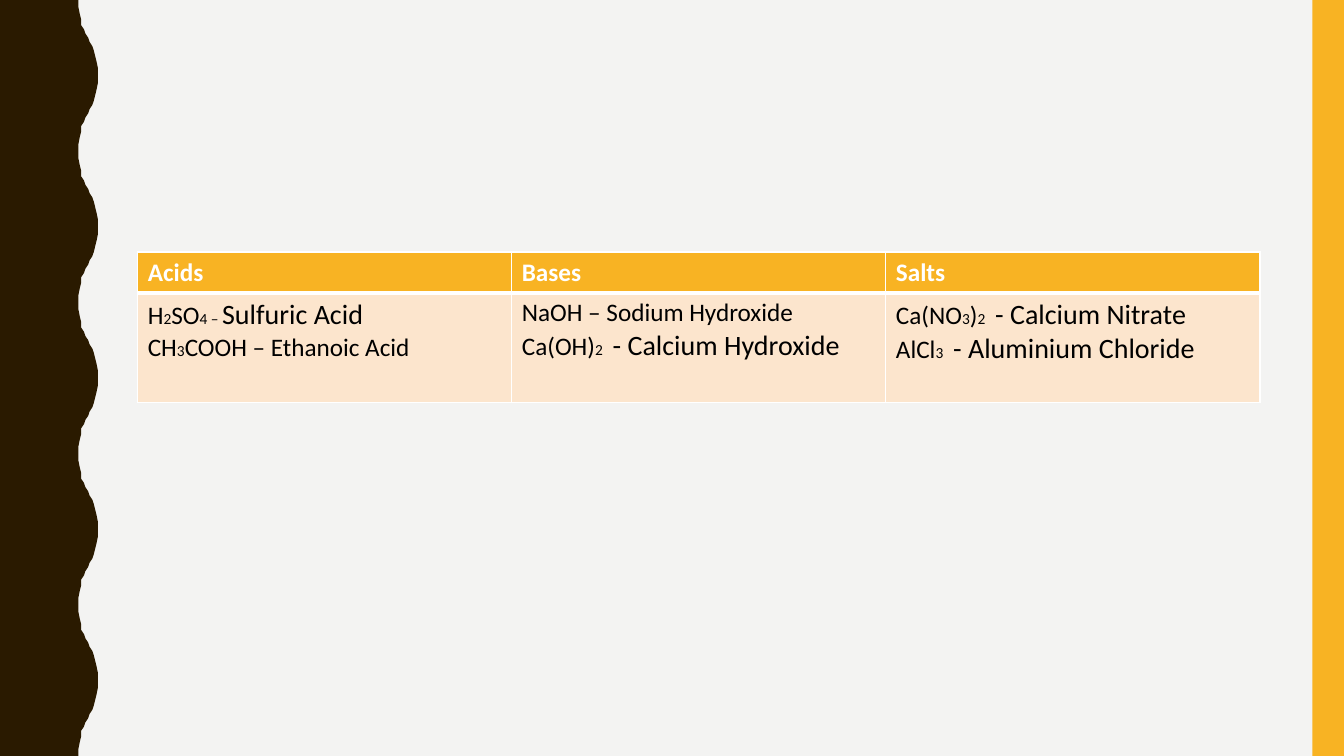
from lxml.etree import SubElement as Sub
from pptx import Presentation as Deck
from pptx.dml.color import RGBColor as Rgb
from pptx.enum.shapes import MSO_SHAPE as Kind
from pptx.oxml.ns import qn
from pptx.util import Pt

WAVE = [(56.2, 0), (56.2, 5), (56.9, 10), (57.6, 14.4), (58.3, 18),
        (59.8, 21), (61.2, 24), (62.6, 27), (64.1, 30), (65.5, 33),
        (67, 36), (68.4, 39.6), (69.1, 44), (69.8, 49), (69.8, 54)]
STEP = 108

HEADS = ["Acids", "Bases", "Salts"]
ITEMS = [
    [[("H", 18), ("2", 11), ("SO", 18), ("4 – ", 11), ("Sulfuric Acid", 20)],
     [("CH", 18), ("3", 11), ("COOH – Ethanoic Acid", 18)]],
    [[("NaOH – Sodium Hydroxide", 18)],
     [("Ca(OH)", 18), ("2 ", 11), (" - Calcium Hydroxide", 20)]],
    [[("Ca(NO", 18), ("3", 11), (")", 18), ("2 ", 11),
      (" - Calcium Nitrate", 20)],
     [("AlCl", 18), ("3 ", 11), (" - Aluminium Chloride", 20)]],
]


def paint(fill, code):
    fill.solid()
    fill.fore_color.rgb = Rgb.from_string(code)


def write(para, text, size=18, color="000000", bold=False, font="Calibri"):
    run = para.add_run()
    run.text = text
    run.font.size = Pt(size)
    run.font.name = font
    run.font.bold = bold
    paint(run.font.fill, color)


class Page:
    dark = "2A1A00"
    gold = "F8B323"
    pale = "FCE5CD"
    white = "FFFFFF"
    back = "F3F3F2"

    def __init__(self, deck):
        self.slide = deck.slides.add_slide(deck.slide_layouts[6])
        self.shapes = self.slide.shapes
        paint(self.slide.background.fill, self.back)

    def finish(self, shape, color):
        shape.shadow.inherit = False
        shape.line.fill.background()
        paint(shape.fill, color)

    def wave(self, count):
        curve = WAVE + [(x, STEP - y) for x, y in WAVE[-2::-1]]
        edge = [(x, y + n * STEP) for n in range(count) for x, y in curve]
        dots = edge + [(0, count * STEP)]
        pen = self.shapes.build_freeform(0, 0, scale=Pt(1))
        pen.add_line_segments(dots, close=True)
        self.finish(pen.convert_to_shape(), self.dark)

    def bar(self, left, top, width, height):
        box = self.shapes.add_shape(
            Kind.RECTANGLE, Pt(left), Pt(top), Pt(width), Pt(height))
        self.finish(box, self.gold)

    def style(self, cell, color, top, base):
        paint(cell.fill, color)
        props = cell._tc.get_or_add_tcPr()
        sides = [("L", 1), ("R", 1), ("T", top), ("B", base)]
        for spot, (side, width) in enumerate(sides):
            line = Sub(props, qn("a:ln" + side), w=str(Pt(width)))
            fill = Sub(line, qn("a:solidFill"))
            Sub(fill, qn("a:srgbClr"), val=self.white)
            props.insert(spot, line)

    def table(self, left, top, width, rows):
        frame = self.shapes.add_table(
            len(rows), len(HEADS), Pt(left), Pt(top), Pt(width), Pt(sum(rows)))
        grid = frame.table
        grid.horz_banding = False
        for row, height in zip(grid.rows, rows):
            row.height = Pt(height)
        for col, (head, item) in enumerate(zip(HEADS, ITEMS)):
            grid.columns[col].width = Pt(width / len(HEADS))
            cell = grid.cell(0, col)
            self.style(cell, self.gold, 1, 3)
            write(cell.text_frame.paragraphs[0], head,
                  color=self.white, bold=True)
            cell = grid.cell(1, col)
            self.style(cell, self.pale, 3, 1)
            frame = cell.text_frame
            for n, runs in enumerate(item):
                para = frame.add_paragraph() if n else frame.paragraphs[0]
                for text, size in runs:
                    write(para, text, size=size)


def main():
    deck = Deck()
    deck.slide_width, deck.slide_height = Pt(960), Pt(540)
    page = Page(deck)
    page.wave(5)
    page.bar(937.5, 0, 22.5, 540)
    page.table(98.4, 180, 801.6, [29.2, 78.4])
    deck.save("out.pptx")


if __name__ == "__main__":
    main()
